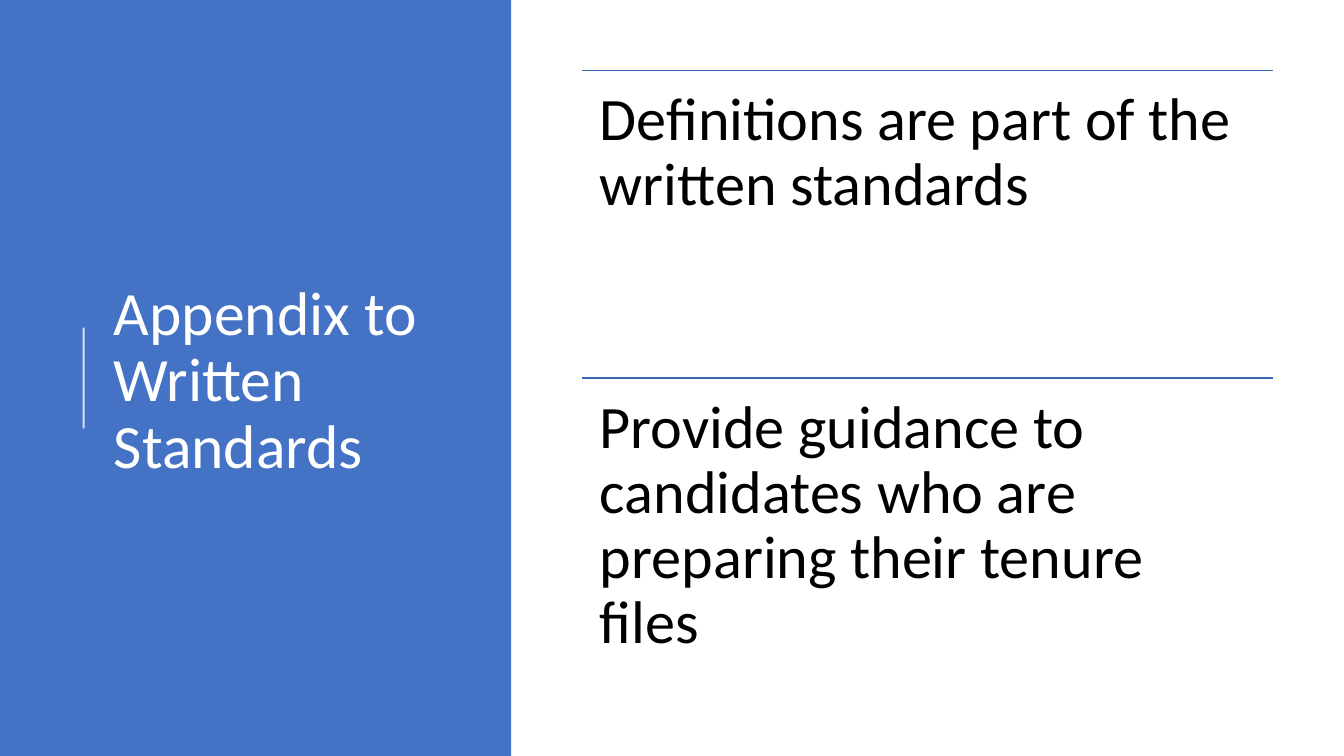
"""Build the slide on the appendix to the written standards."""
from lxml import etree
from pptx import Presentation
from pptx.dml.color import RGBColor
from pptx.enum.shapes import MSO_CONNECTOR, MSO_SHAPE
from pptx.enum.text import MSO_ANCHOR, MSO_AUTO_SIZE, PP_ALIGN
from pptx.oxml.ns import qn
from pptx.util import Inches, Pt

RECT = MSO_SHAPE.RECTANGLE
STRAIGHT = MSO_CONNECTOR.STRAIGHT
TOP, MIDDLE = MSO_ANCHOR.TOP, MSO_ANCHOR.MIDDLE
LEFT = PP_ALIGN.LEFT
NO_AUTOFIT = MSO_AUTO_SIZE.NONE

TITLE_ONLY = 5
FONT = "Calibri"
BLUE, RULE_BLUE, WHITE, BLACK = "4472C4", "3E67B2", "FFFFFF", "000000"
ITEMS = [
    "Definitions are part of the written standards",
    "Provide guidance to candidates who are preparing their tenure files",
]
ITEM_LEFT, ITEM_TOP, ITEM_WIDTH, ITEM_HEIGHT = 5.77, 0.7, 6.86, 3.05


def color(hex_color):
    """Return the colour for a hex string."""
    return RGBColor.from_string(hex_color)


def add_panel(s, x, y, w, h, fill):
    """Add a plain filled rectangle behind everything else."""
    sp = s.shapes.add_shape(RECT, Inches(x), Inches(y), Inches(w), Inches(h))
    sp.shadow.inherit = False
    sp.fill.solid()
    sp.fill.fore_color.rgb = color(fill)
    sp.line.fill.background()
    s.shapes._spTree.insert(2, sp._element)


def add_line(s, x1, y1, x2, y2, hex_color, width, opacity=100):
    """Add a straight line, with its opacity in percent."""
    line = s.shapes.add_connector(
        STRAIGHT, Inches(x1), Inches(y1), Inches(x2), Inches(y2))
    line.line.color.rgb = color(hex_color)
    line.line.width = Pt(width)
    sp_pr = line._element.spPr
    etree.SubElement(sp_pr, qn("a:effectLst"))
    if opacity < 100:
        rgb = sp_pr.find(".//" + qn("a:srgbClr"))
        etree.SubElement(rgb, qn("a:alpha"), val=str(opacity * 1000))


def format_text(tf, text, size, hex_color, anchor):
    """Write one left-aligned paragraph into a text frame."""
    tf.text = text
    tf.word_wrap = True
    tf.auto_size = NO_AUTOFIT
    tf.vertical_anchor = anchor
    p = tf.paragraphs[0]
    p.alignment = LEFT
    p.line_spacing = 0.9
    r = p.runs[0]
    r.font.name = FONT
    r.font.size = Pt(size)
    r.font.color.rgb = color(hex_color)


def set_title(s, text, x, y, w, h):
    """Place and format the title placeholder."""
    sp = s.shapes.title
    sp.left, sp.top, sp.width, sp.height = map(Inches, (x, y, w, h))
    format_text(sp.text_frame, text, 44, WHITE, MIDDLE)


def add_item(s, text, x, y, w, h):
    """Add a statement under a thin rule."""
    add_line(s, x, y, x + w, y, RULE_BLUE, 1)
    sp = s.shapes.add_textbox(Inches(x), Inches(y), Inches(w), Inches(h))
    tf = sp.text_frame
    tf.margin_left = tf.margin_right = Inches(0.18)
    tf.margin_top = tf.margin_bottom = Inches(0.18)
    format_text(tf, text, 43, BLACK, TOP)


def main():
    """Build and save the slide."""
    prs = Presentation()
    prs.slide_width, prs.slide_height = Inches(13.33), Inches(7.5)
    s = prs.slides.add_slide(prs.slide_layouts[TITLE_ONLY])
    add_panel(s, 0, 0, 5.07, 7.5, BLUE)
    add_line(s, 0.83, 4.25, 0.83, 3.25, WHITE, 1.5, opacity=80)
    set_title(s, "Appendix to Written Standards", 1.03, 0.78, 3.69, 6.02)
    for i, text in enumerate(ITEMS):
        add_item(s, text, ITEM_LEFT, ITEM_TOP + i * ITEM_HEIGHT,
                 ITEM_WIDTH, ITEM_HEIGHT)
    prs.save("out.pptx")


if __name__ == "__main__":
    main()
